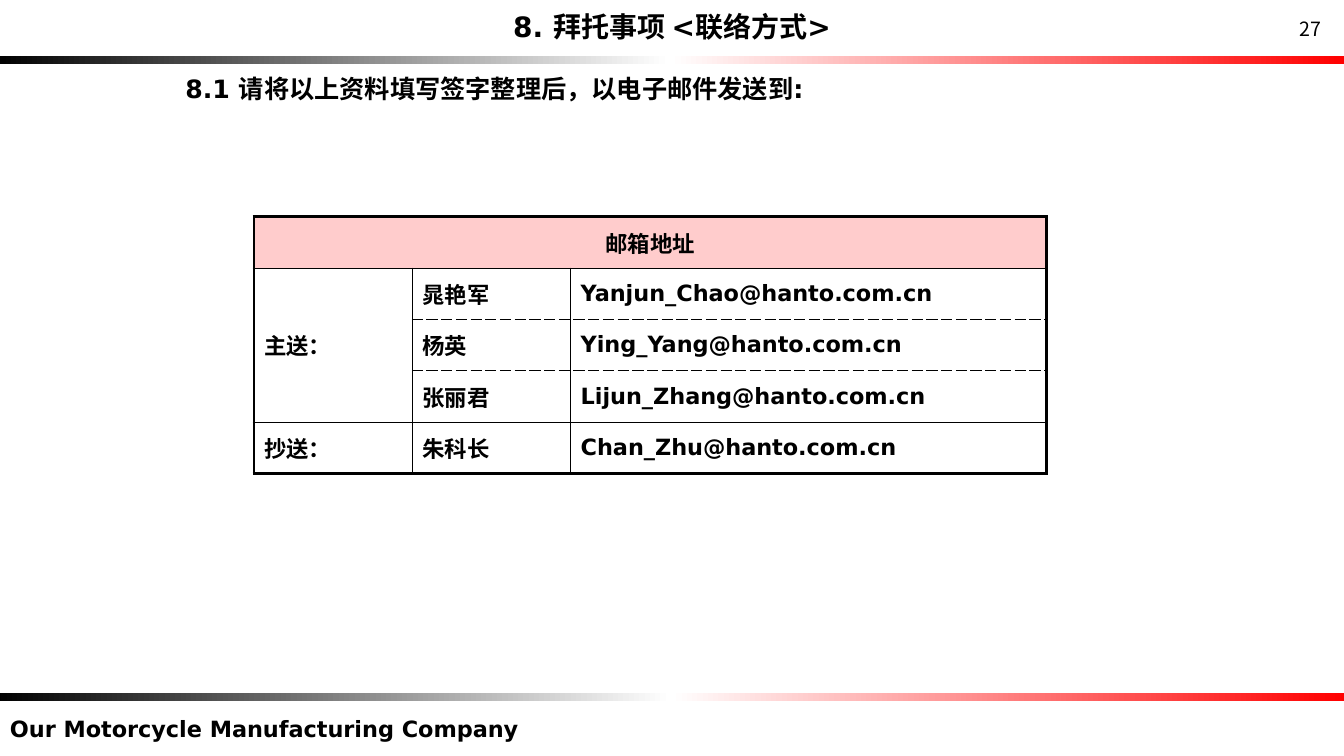
from dataclasses import dataclass

from lxml.etree import SubElement
from pptx import Presentation
from pptx.dml.color import RGBColor
from pptx.enum.shapes import MSO_SHAPE
from pptx.enum.text import MSO_ANCHOR, MSO_AUTO_SIZE, PP_ALIGN
from pptx.oxml.ns import qn
from pptx.util import Inches, Pt


@dataclass(frozen=True)
class Theme:
    black: str = "000000"
    white: str = "FFFFFF"
    red: str = "FF0000"
    pink: str = "FFCCCC"
    font: str = "DejaVu Sans"
    cjk_font: str = "Noto Sans CJK JP"
    title: int = 20
    heading: int = 18
    body: int = 16
    number: int = 14
    thick: float = 2.25
    thin: float = 1


THEME = Theme()
THICK = (THEME.thick, "solid")
THIN = (THEME.thin, "solid")
DASHED = (THEME.thin, "dash")

COLUMN_WIDTHS = (1.57, 1.57, 4.72)
ROW_HEIGHT = 0.51
ROWS = (
    ("邮箱地址", "", ""),
    ("主送：", "晁艳军", "Yanjun_Chao@hanto.com.cn"),
    ("", "杨英", "Ying_Yang@hanto.com.cn"),
    ("", "张丽君", "Lijun_Zhang@hanto.com.cn"),
    ("抄送：", "朱科长", "Chan_Zhu@hanto.com.cn"),
)


def write(tf, text, size=THEME.body, bold=True, font=THEME.font,
          align=PP_ALIGN.LEFT, hanging=0):
    p = tf.paragraphs[0]
    p.alignment = align
    if hanging:
        pPr = p._p.get_or_add_pPr()
        pPr.set("marL", str(Inches(hanging)))
        pPr.set("indent", str(Inches(-hanging)))
    r = p.add_run()
    r.text = text
    r.font.size = Pt(size)
    r.font.bold = bold
    r.font.name = font
    r.font.color.rgb = RGBColor.from_string(THEME.black)
    SubElement(r._r.get_or_add_rPr(), qn("a:ea"), typeface=THEME.cjk_font)


def add_text(slide, left, top, width, height, text, wrap=True, grow=True,
             anchor=MSO_ANCHOR.TOP, **style):
    box = slide.shapes.add_textbox(
        Inches(left), Inches(top), Inches(width), Inches(height))
    tf = box.text_frame
    tf.word_wrap = wrap
    tf.auto_size = MSO_AUTO_SIZE.SHAPE_TO_FIT_TEXT if grow else MSO_AUTO_SIZE.NONE
    tf.vertical_anchor = anchor
    write(tf, text, **style)


def add_gradient_bar(slide, left, top):
    sp = slide.shapes.add_shape(
        MSO_SHAPE.RECTANGLE, Inches(left), Inches(top), Inches(13.39), Inches(0.08))
    sp.shadow.inherit = False
    sp.line.fill.background()
    sp.fill.gradient()
    sp.fill.gradient_angle = 0
    stops = sp._element.spPr.find(".//" + qn("a:gsLst"))
    for stop in list(stops):
        stops.remove(stop)
    for percent, color in ((0, THEME.black), (50, THEME.white), (100, THEME.red)):
        stop = SubElement(stops, qn("a:gs"), pos=str(percent * 1000))
        SubElement(stop, qn("a:srgbClr"), val=color)


def horizontal_rule(line, col):
    """Style of the line above the row with the same index."""
    if line in (0, len(ROWS)):
        return THICK
    if line in (2, 3):
        return DASHED if col else None
    return THIN


def vertical_rule(line, row):
    """Style of the line left of the column with the same index."""
    if line in (0, len(COLUMN_WIDTHS)):
        return THICK
    return THIN if row else None


def set_borders(cell, row, col):
    tcPr = cell._tc.get_or_add_tcPr()
    borders = (
        ("a:lnL", vertical_rule(col, row)),
        ("a:lnR", vertical_rule(col + cell.span_width, row)),
        ("a:lnT", horizontal_rule(row, col)),
        ("a:lnB", horizontal_rule(row + cell.span_height, col)),
    )
    for tag, rule in borders:
        ln = SubElement(tcPr, qn(tag))
        if rule is None:
            SubElement(ln, qn("a:noFill"))
            continue
        width, dash = rule
        ln.set("w", str(Pt(width)))
        fill = SubElement(ln, qn("a:solidFill"))
        SubElement(fill, qn("a:srgbClr"), val=THEME.black)
        SubElement(ln, qn("a:prstDash"), val=dash)


def add_address_table(slide, left, top):
    table = slide.shapes.add_table(
        len(ROWS), len(COLUMN_WIDTHS), Inches(left), Inches(top),
        Inches(sum(COLUMN_WIDTHS)), Inches(ROW_HEIGHT * len(ROWS))).table
    for column, width in zip(table.columns, COLUMN_WIDTHS):
        column.width = Inches(width)
    for row in table.rows:
        row.height = Inches(ROW_HEIGHT)
    table.cell(0, 0).merge(table.cell(0, 2))
    table.cell(1, 0).merge(table.cell(3, 0))
    for row, texts in enumerate(ROWS):
        for col, text in enumerate(texts):
            cell = table.cell(row, col)
            set_borders(cell, row, col)
            cell.fill.solid()
            cell.fill.fore_color.rgb = RGBColor.from_string(
                THEME.white if row else THEME.pink)
            cell.vertical_anchor = MSO_ANCHOR.MIDDLE
            if text:
                write(cell.text_frame, text,
                      align=PP_ALIGN.LEFT if row else PP_ALIGN.CENTER)


def main():
    prs = Presentation()
    prs.slide_width, prs.slide_height = Inches(13.33), Inches(7.5)
    slide = prs.slides.add_slide(prs.slide_layouts[6])

    add_gradient_bar(slide, -0.05, 0.56)
    add_gradient_bar(slide, -0.04, 6.87)
    add_text(slide, 0, 7.05, 7.39, 0.37, "Our Motorcycle Manufacturing Company")
    add_text(slide, 12.67, 0.12, 0.66, 0.34, "27", size=THEME.number, bold=False,
             font=THEME.cjk_font, align=PP_ALIGN.CENTER)
    add_text(slide, 3.81, 0.1, 5.71, 0.33, "8. 拜托事项 <联络方式>", grow=False,
             anchor=MSO_ANCHOR.MIDDLE, size=THEME.title, align=PP_ALIGN.CENTER)
    add_text(slide, 1.74, 0.68, 6.39, 0.4,
             "8.1 请将以上资料填写签字整理后，以电子邮件发送到:", wrap=False,
             size=THEME.heading, hanging=0.38)
    add_address_table(slide, 2.52, 2.15)

    prs.save("out.pptx")


if __name__ == "__main__":
    main()
